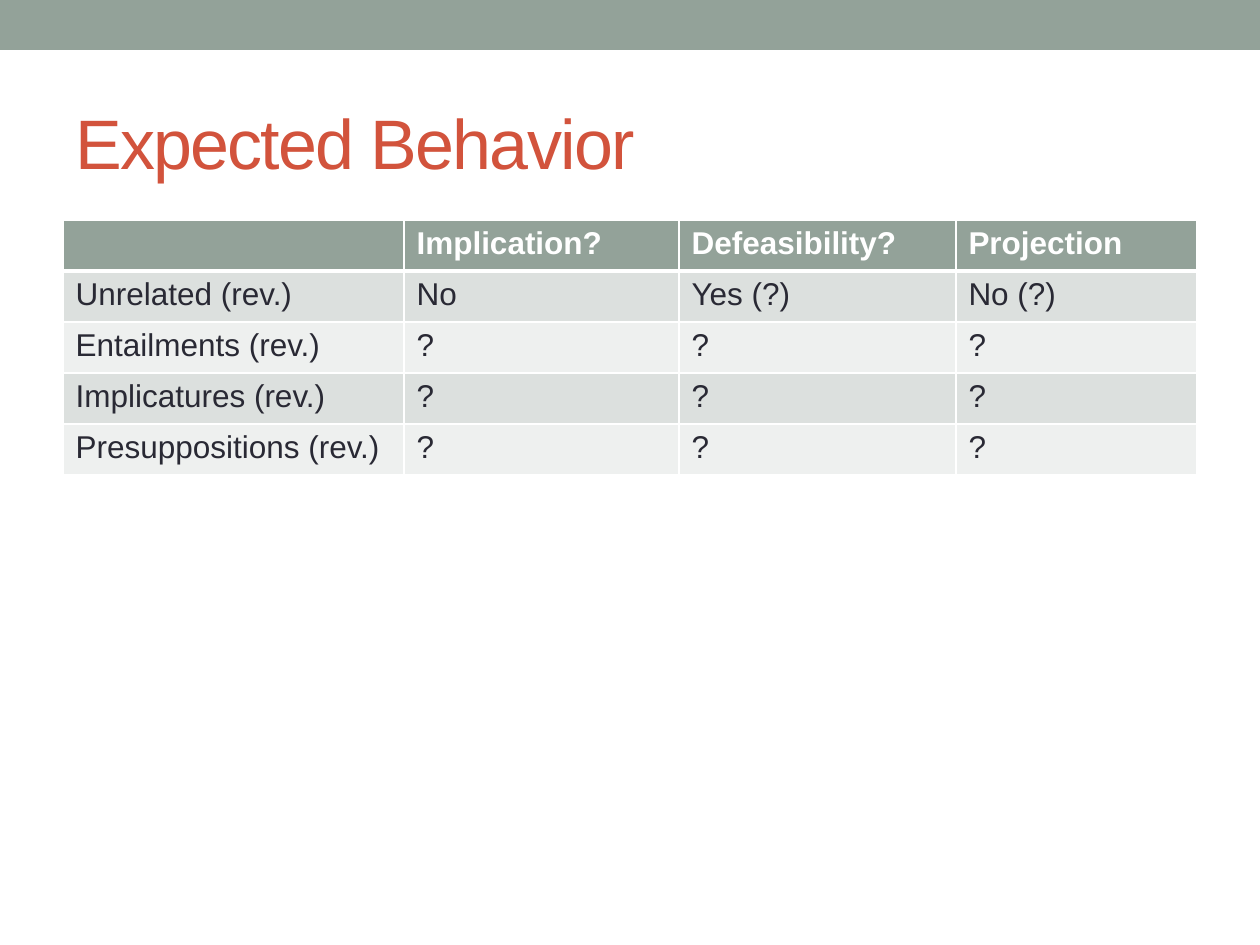
"""Build the Expected Behavior slide: a top band, a title and a table of inference types."""
import pptx
import pptx.dml.color
import pptx.enum.shapes
import pptx.enum.text
import pptx.oxml.ns
import pptx.util
from lxml import etree

PX = 914400 / 126
SAGE, WHITE, INK, RUST = "93A299", "FFFFFF", "292934", "D2533C"
BANDS = ["DCE0DE", "EEF0EF"]


def color(value):
    return pptx.dml.color.RGBColor.from_string(value)


def write(frame, text, size=18, ink=INK, bold=False, spacing=0):
    run = frame.paragraphs[0].add_run()
    run.text = text
    run.font.name = "Arial"
    run.font.size = pptx.util.Pt(size)
    run.font.bold = bold
    run.font.color.rgb = color(ink)
    if spacing:
        run.font._element.set("spc", str(spacing * 100))


deck = pptx.Presentation()
deck.slide_width, deck.slide_height = int(1260 * PX), int(945 * PX)
slide = deck.slides.add_slide(deck.slide_layouts[6])
slide.background.fill.solid()
slide.background.fill.fore_color.rgb = color(WHITE)

top_band = slide.shapes.add_shape(
    pptx.enum.shapes.MSO_SHAPE.RECTANGLE, 0, 0, int(1260 * PX), int(50 * PX))
top_band.shadow.inherit = False
top_band.fill.solid()
top_band.fill.fore_color.rgb = color(SAGE)
top_band.line.fill.background()

title = slide.shapes.add_textbox(int(63 * PX), int(73 * PX), int(1134 * PX), int(136 * PX))
title.text_frame.word_wrap = True
title.text_frame.vertical_anchor = pptx.enum.text.MSO_ANCHOR.MIDDLE
write(title.text_frame, "Expected Behavior", size=40, ink=RUST, spacing=-1)

behavior = [
    ["", "Implication?", "Defeasibility?", "Projection"],
    ["Unrelated (rev.)", "No", "Yes (?)", "No (?)"],
    ["Entailments (rev.)", "?", "?", "?"],
    ["Implicatures (rev.)", "?", "?", "?"],
    ["Presuppositions (rev.)", "?", "?", "?"],
]
column_widths = [341, 275, 277, 241]
row_height = 51
grid = slide.shapes.add_table(
    len(behavior), len(column_widths), int(63 * PX), int(220 * PX),
    int(sum(column_widths) * PX), int(len(behavior) * row_height * PX)).table
for column, width in zip(grid.columns, column_widths):
    column.width = int(width * PX)

for r, entries in enumerate(behavior):
    grid.rows[r].height = int(row_height * PX)
    heading = r == 0
    for c, entry in enumerate(entries):
        cell = grid.cell(r, c)
        properties = cell._tc.get_or_add_tcPr()
        for side in "LRTB":
            thick = (heading and side == "B") or (r == 1 and side == "T")
            border = etree.SubElement(properties, pptx.oxml.ns.qn(f"a:ln{side}"),
                                      w=str(pptx.util.Pt(3 if thick else 1)))
            paint = etree.SubElement(border, pptx.oxml.ns.qn("a:solidFill"))
            etree.SubElement(paint, pptx.oxml.ns.qn("a:srgbClr"), val=WHITE)
        cell.fill.solid()
        cell.fill.fore_color.rgb = color(SAGE if heading else BANDS[(r - 1) % 2])
        if entry:
            write(cell.text_frame, entry, ink=WHITE if heading else INK, bold=heading)

deck.save("out.pptx")
